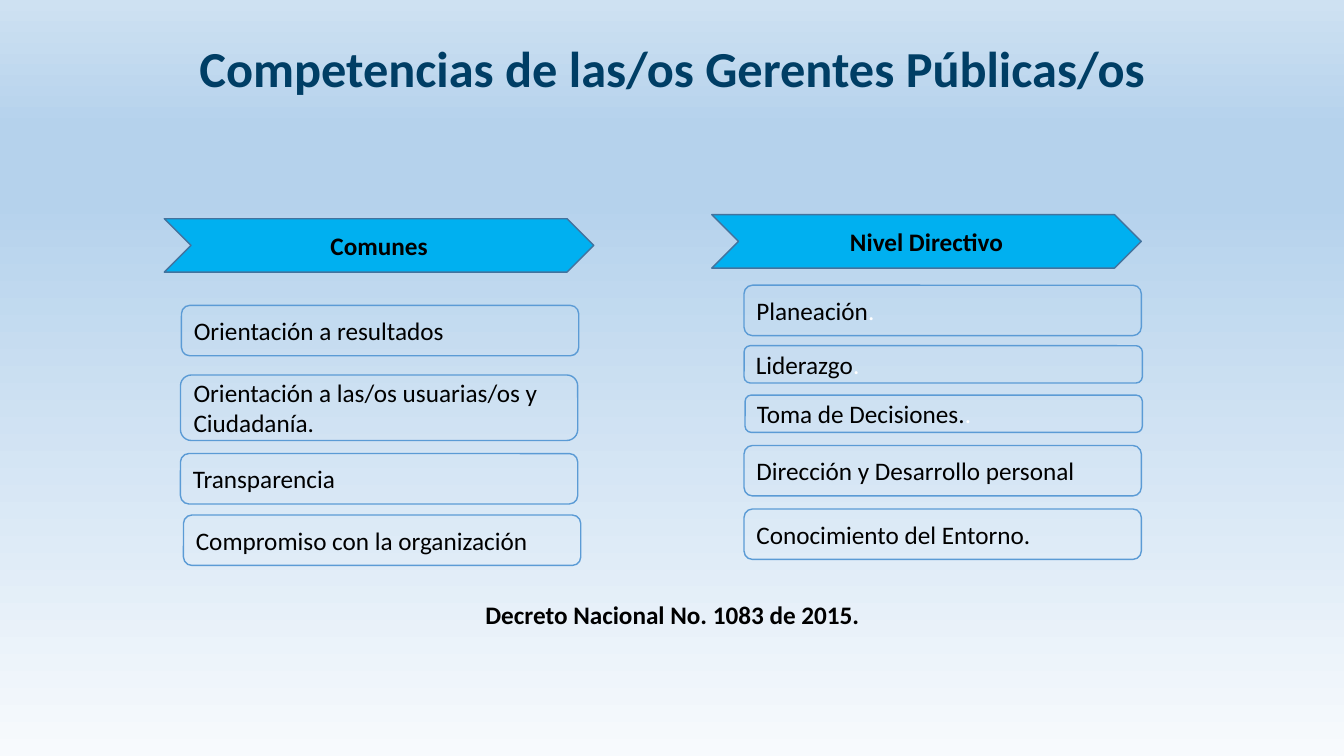
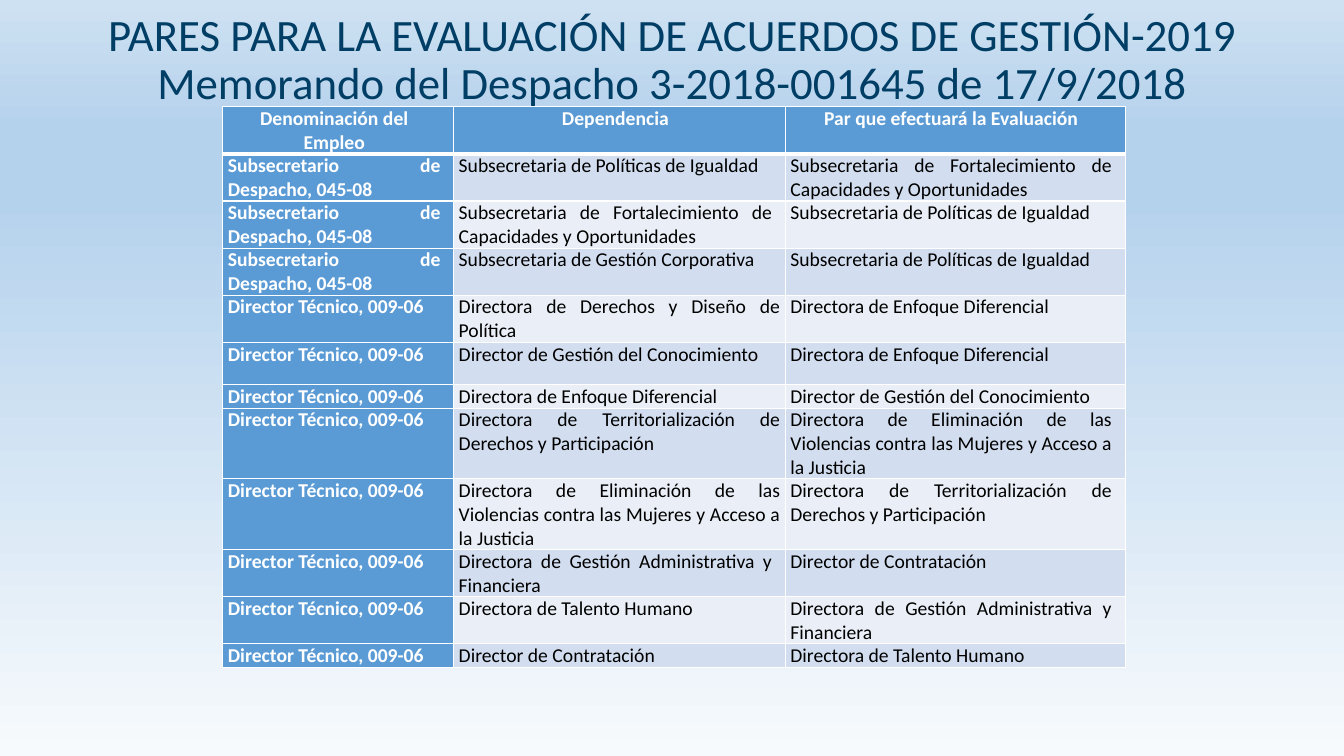
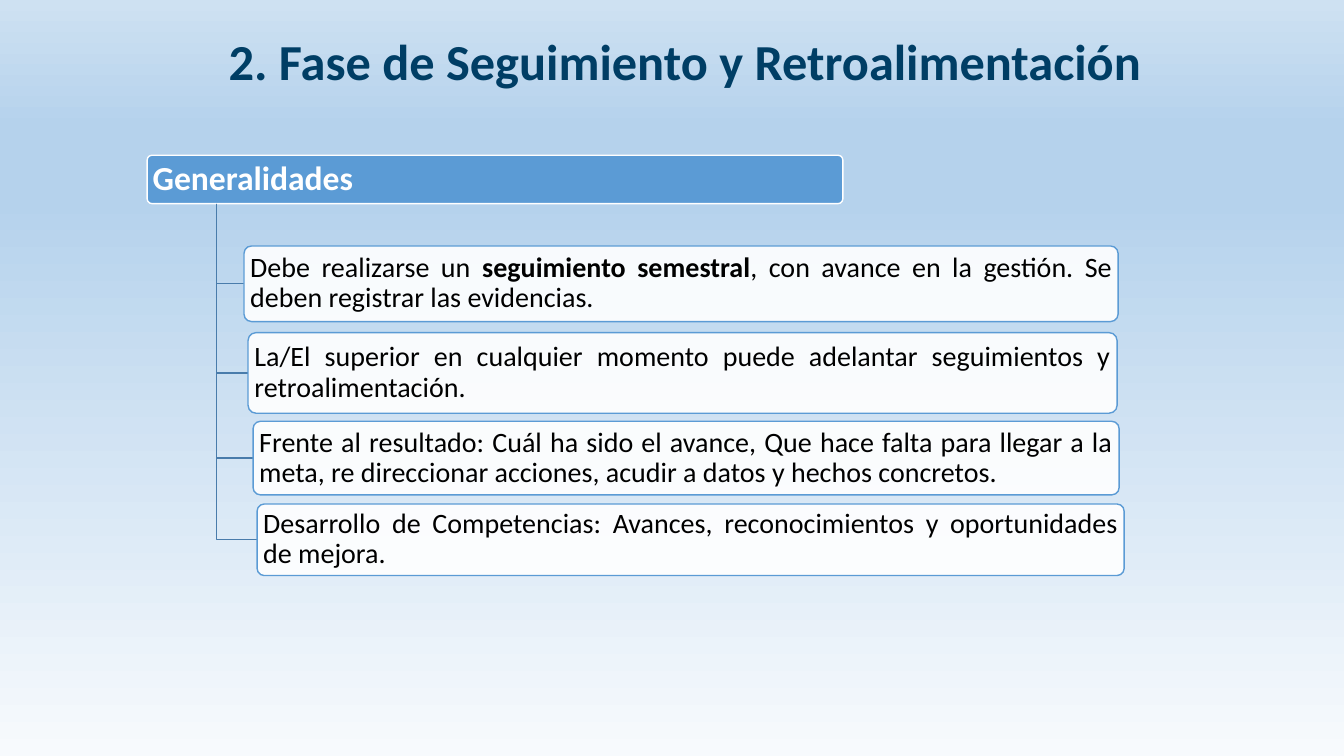
from lxml import etree
from pptx import Presentation
from pptx.dml.color import RGBColor
from pptx.enum.shapes import MSO_SHAPE as Shape
from pptx.enum.text import MSO_ANCHOR as Anchor, PP_ALIGN as Align
from pptx.oxml.ns import qn
from pptx.util import Inches, Pt

FONT = "Calibri"
COLORS = {
    "title": "003E65", "text": "000000", "white": "FFFFFF",
    "chevron": "00B0F0", "chevron_line": "43739E",
    "accent": "5B9BD5", "branch": "497CAB",
    "band_dark": "D2DEEF", "band_light": "EAEFF7",
}
BACKGROUND_STOPS = [(0, "F7FAFD"), (74, "B5D2EC"), (83, "B5D2EC"), (100, "CEE1F2")]

# Slide 1: boxes are (text, white ending, left, top, width, height)
COMPETENCIES_TITLE = "Competencias de las/os Gerentes Públicas/os"
DECREE = "Decreto Nacional No. 1083 de 2015."
HEADINGS = [("Comunes", 1.63, 2.17), ("Nivel Directivo", 7.06, 2.13)]
COMPETENCIES = [
    ("Orientación a resultados", "", 1.8, 3.03, 3.94, 0.5),
    ("Orientación a las/os usuarias/os y Ciudadanía.", "", 1.79, 3.72, 3.94, 0.65),
    ("Transparencia", "", 1.79, 4.5, 3.94, 0.5),
    ("Compromiso con la organización", "", 1.82, 5.11, 3.94, 0.5),
    ("Planeación", ".", 7.38, 2.83, 3.94, 0.5),
    ("Liderazgo", ".", 7.38, 3.43, 3.95, 0.37),
    ("Toma de Decisiones.", ".", 7.39, 3.92, 3.94, 0.37),
    ("Dirección y Desarrollo personal", "", 7.38, 4.42, 3.94, 0.5),
    ("Conocimiento del Entorno.", "", 7.38, 5.05, 3.94, 0.5),
]

# Slide 2
PEERS_TITLE = ("PARES PARA LA EVALUACIÓN DE ACUERDOS DE GESTIÓN-2019\v"
               "Memorando del Despacho 3-2018-001645 de 17/9/2018")
UNDERSECRETARY = "Subsecretario de Despacho, 045-08"
DIRECTOR = "Director Técnico, 009-06"
EQUALITY = "Subsecretaria de Políticas de Igualdad"
CAPACITIES = "Subsecretaria de Fortalecimiento de Capacidades y Oportunidades"
APPROACH = "Directora de Enfoque Diferencial"
KNOWLEDGE = "Director de Gestión del Conocimiento"
TERRITORY = "Directora de Territorialización de Derechos y Participación"
VIOLENCE = ("Directora de Eliminación de las Violencias contra las Mujeres "
            "y Acceso a la Justicia")
FINANCE = "Directora de Gestión Administrativa y Financiera"
TALENT = "Directora de Talento Humano"
CONTRACTS = "Director de Contratación"
PEERS = [
    ("Denominación del Empleo", "Dependencia", "Par que efectuará la Evaluación"),
    (UNDERSECRETARY, EQUALITY, CAPACITIES),
    (UNDERSECRETARY, CAPACITIES, EQUALITY),
    (UNDERSECRETARY, "Subsecretaria de Gestión Corporativa", EQUALITY),
    (DIRECTOR, "Directora de Derechos y Diseño de Política", APPROACH),
    (DIRECTOR, KNOWLEDGE, APPROACH),
    (DIRECTOR, APPROACH, KNOWLEDGE),
    (DIRECTOR, TERRITORY, VIOLENCE),
    (DIRECTOR, VIOLENCE, TERRITORY),
    (DIRECTOR, FINANCE, CONTRACTS),
    (DIRECTOR, TALENT, FINANCE),
    (DIRECTOR, CONTRACTS, TALENT),
]
COLUMN_WIDTHS = [2.29, 3.29, 3.37]
ROW_HEIGHTS = [0.45] * 5 + [0.42, 0.22, 0.67, 0.67, 0.45, 0.45, 0.22]
FULL_WIDTH_ROWS = range(4, 9)  # second column reaches the cell edge here

# Slide 3: steps are (runs, left, top, width, height)
FOLLOW_UP_TITLE = "2. Fase de Seguimiento y Retroalimentación"
FOLLOW_UP_HEADING = "Generalidades"
TRUNK = (2.15, 2.02)
STEPS = [
    ([("Debe realizarse un ", {}), ("seguimiento semestral", {"bold": True}),
      (", con avance en la gestión. Se deben registrar las evidencias.", {})],
     2.42, 2.44, 8.67, 0.75),
    ([("La/El superior en cualquier momento puede adelantar seguimientos y "
       "retroalimentación.", {})], 2.46, 3.3, 8.62, 0.8),
    ([("Frente al resultado: Cuál ha sido el avance, Que hace falta para llegar a la "
       "meta, re direccionar acciones, acudir a datos y hechos concretos.", {})],
     2.51, 4.18, 8.59, 0.73),
    ([("Desarrollo de Competencias: Avances, reconocimientos y oportunidades de "
       "mejora.", {})], 2.55, 5, 8.6, 0.71),
]


def rgb(name):
    return RGBColor.from_string(COLORS[name])


def write(frame, runs, size, color="text", bold=False, align=Align.LEFT,
          spacing=1.0, margins=None, anchor=Anchor.MIDDLE):
    """Fill a text frame with one paragraph of (text, overrides) runs."""
    frame.word_wrap = True
    frame.vertical_anchor = anchor
    if margins:
        sides = ("margin_left", "margin_top", "margin_right", "margin_bottom")
        for side, value in zip(sides, margins):
            setattr(frame, side, Inches(value))
    paragraph = frame.paragraphs[0]
    paragraph.alignment = align
    paragraph.line_spacing = spacing
    for text, overrides in runs:
        style = {"color": color, "bold": bold, **overrides}
        for index, line in enumerate(text.split("\v")):
            if index:
                paragraph.add_line_break()
            run = paragraph.add_run()
            run.text = line
            for name, value in {"name": FONT, "size": Pt(size), "bold": style["bold"]}.items():
                setattr(run.font, name, value)
            run.font.color.rgb = rgb(style["color"])


def add_text(slide, text, box, **style):
    shape = slide.shapes.add_textbox(*map(Inches, box))
    write(shape.text_frame, [(text, {})], **style)


def outline(shape, fill, line):
    shape.shadow.inherit = False
    if fill:
        shape.fill.solid()
        shape.fill.fore_color.rgb = rgb(fill)
    else:
        shape.fill.background()
    shape.line.color.rgb = rgb(line)
    shape.line.width = Pt(1)


def add_box(slide, kind, box, runs, fill=None, line="accent", corner=None, **style):
    shape = slide.shapes.add_shape(kind, *map(Inches, box))
    outline(shape, fill, line)
    if corner is not None:
        shape.adjustments[0] = corner
    write(shape.text_frame, runs, **style)
    return shape


def set_background(master):
    fill = master.background.fill
    fill.gradient()
    fill.gradient_angle = 90
    stops = next(master.element.iter(qn("a:gsLst")))
    for stop in list(stops):
        stops.remove(stop)
    for position, color in BACKGROUND_STOPS:
        stop = etree.SubElement(stops, qn("a:gs"), pos=str(position * 1000))
        etree.SubElement(stop, qn("a:srgbClr"), val=color)


def add_slide(presentation, title, box, size=36, bold=True):
    slide = presentation.slides.add_slide(presentation.slide_layouts[6])
    add_text(slide, title, box, size=size, color="title", bold=bold,
             align=Align.CENTER, spacing=0.9)
    return slide


def set_borders(cell, bottom):
    """Give a filled cell white borders, the bottom one of its own width."""
    properties = cell._tc.get_or_add_tcPr()
    widths = {"a:lnL": 1, "a:lnR": 1, "a:lnT": 1, "a:lnB": bottom}
    for index, (tag, width) in enumerate(widths.items()):
        border = etree.Element(qn(tag), w=str(Pt(width)))
        solid = etree.SubElement(border, qn("a:solidFill"))
        etree.SubElement(solid, qn("a:srgbClr"), val=COLORS["white"])
        properties.insert(index, border)


def build_competencies(presentation):
    slide = add_slide(presentation, COMPETENCIES_TITLE, (0.92, 0.28, 11.5, 0.85))
    add_text(slide, DECREE, (3.82, 5.98, 5.7, 0.37), size=18, bold=True,
             align=Align.CENTER, spacing=0.7, anchor=Anchor.TOP)
    for text, left, top in HEADINGS:
        add_box(slide, Shape.CHEVRON, (left, top, 4.26, 0.53), [(text, {})],
                fill="chevron", line="chevron_line", size=18, bold=True,
                align=Align.CENTER)
    for text, ending, *box in COMPETENCIES:
        runs = [(text, {})]
        if ending:
            runs.append((ending, {"color": "white"}))
        add_box(slide, Shape.ROUNDED_RECTANGLE, box, runs, size=18)


def build_peers(presentation):
    slide = add_slide(presentation, PEERS_TITLE, (0.92, 0.28, 11.5, 0.65), 32, False)
    box = (2.21, 1.06, sum(COLUMN_WIDTHS), sum(ROW_HEIGHTS))
    table = slide.shapes.add_table(len(PEERS), len(COLUMN_WIDTHS), *map(Inches, box)).table
    for column, width in zip(table.columns, COLUMN_WIDTHS):
        column.width = Inches(width)
    for row, height in zip(table.rows, ROW_HEIGHTS):
        row.height = Inches(height)
    for r, texts in enumerate(PEERS):
        for c, text in enumerate(texts):
            cell = table.cell(r, c)
            heading = r == 0 or c == 0
            band = "band_dark" if r % 2 else "band_light"
            cell.fill.solid()
            cell.fill.fore_color.rgb = rgb("accent" if heading else band)
            set_borders(cell, bottom=1 if r else 3)
            right = 0.05 if c == 1 and r in FULL_WIDTH_ROWS else 0.13
            for side, value in {"left": 0.05, "right": right, "top": 0, "bottom": 0}.items():
                setattr(cell, f"margin_{side}", Inches(value))
            cell.vertical_anchor = Anchor.TOP
            write(cell.text_frame, [(text, {})], 14, "white" if heading else "text",
                  heading, Align.JUSTIFY if r else Align.CENTER, anchor=None)


def build_follow_up(presentation):
    slide = add_slide(presentation, FOLLOW_UP_TITLE, (1.47, 0.28, 10.65, 0.72))
    step_style = {"corner": 0.1, "align": Align.JUSTIFY, "spacing": 0.9,
                  "margins": (0.04, 0.03, 0.04, 0.03)}
    add_box(slide, Shape.ROUNDED_RECTANGLE, (1.46, 1.54, 6.9, 0.48),
            [(FOLLOW_UP_HEADING, {})], fill="accent", line="white", size=24,
            color="white", bold=True, **step_style)
    trunk_x, trunk_y = map(Inches, TRUNK)
    for runs, left, top, width, height in STEPS:
        middle = Inches(top + height / 2)
        builder = slide.shapes.build_freeform(trunk_x, trunk_y)
        builder.add_line_segments([(trunk_x, middle), (Inches(left), middle)], close=False)
        outline(builder.convert_to_shape(), None, "branch")
        step = add_box(slide, Shape.ROUNDED_RECTANGLE, (left, top, width, height), runs,
                       fill="white", size=20, **step_style)
        fill_color = step.fill._xPr.find(qn("a:solidFill"))[0]
        etree.SubElement(fill_color, qn("a:alpha"), val="90000")


def main():
    presentation = Presentation()
    presentation.slide_width = Inches(13.33)
    presentation.slide_height = Inches(7.5)
    set_background(presentation.slide_master)
    for build in (build_competencies, build_peers, build_follow_up):
        build(presentation)
    presentation.save("out.pptx")


if __name__ == "__main__":
    main()
